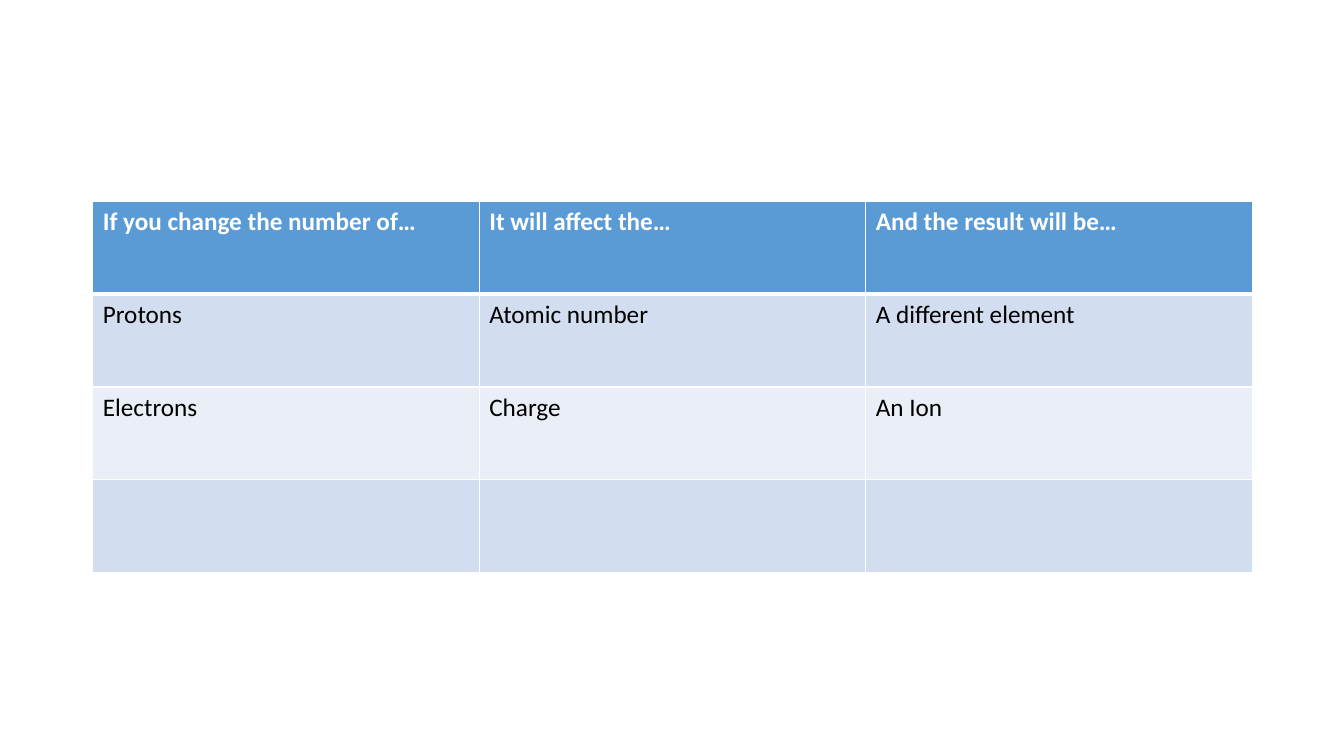
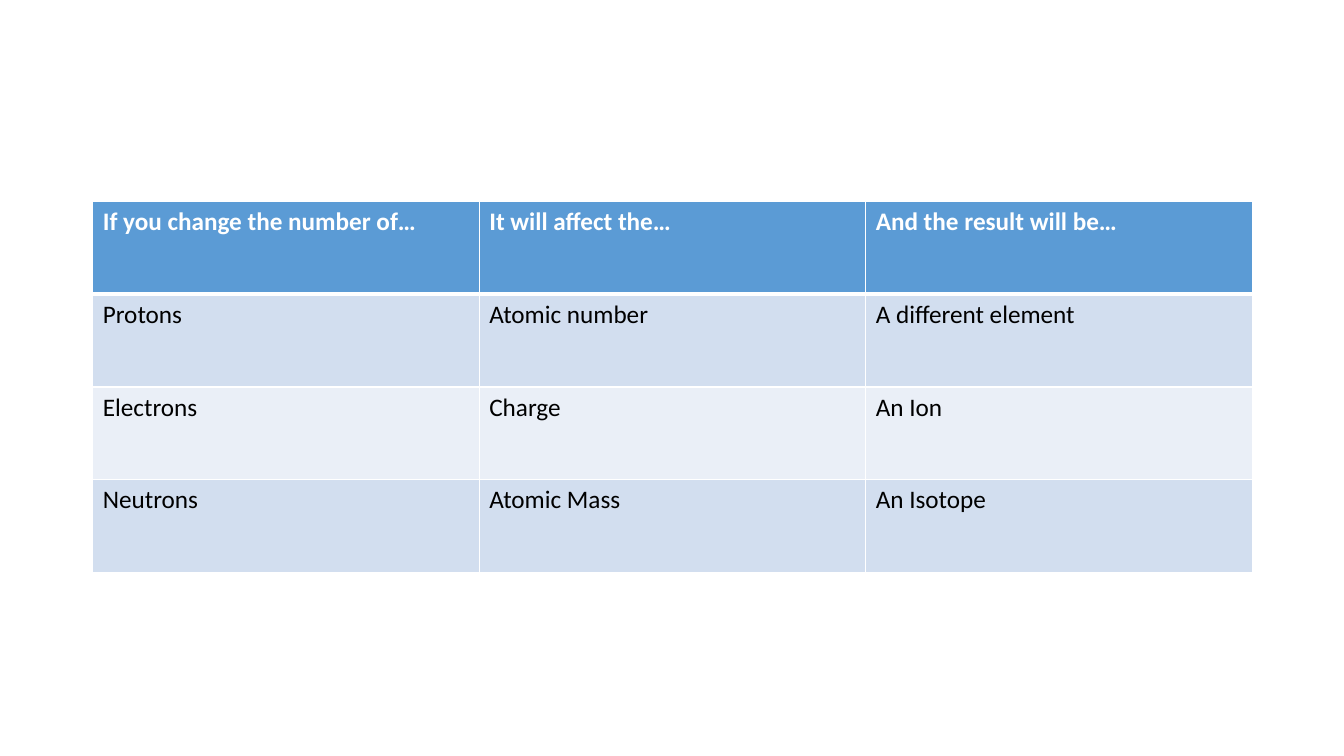
from dataclasses import dataclass

from lxml import etree
from pptx import Presentation
from pptx.dml.color import RGBColor
from pptx.oxml.ns import qn
from pptx.util import Inches, Pt


@dataclass(frozen=True)
class Theme:
    font: str = "Calibri"
    text_size: int = 18
    header_fill: str = "5B9BD5"
    band_fills: tuple = ("D2DEEF", "EAEFF7")
    header_text: str = "FFFFFF"
    body_text: str = "000000"
    border: str = "FFFFFF"
    thin_border: int = 1
    thick_border: int = 3


THEME = Theme()
BLANK_LAYOUT = 6
HEADER = ("If you change the number of…", "It will affect the…", "And the result will be…")
PROTONS = ("Protons", "Atomic number", "A different element")
ELECTRONS = ("Electrons", "Charge", "An Ion")
NEUTRONS = ("Neutrons", "Atomic Mass", "An Isotope")
UNANSWERED = ("", "", "")
SLIDE_ROWS = (
    (HEADER, PROTONS, ELECTRONS, UNANSWERED),
    (HEADER, PROTONS, ELECTRONS, NEUTRONS),
)
TABLE_LEFT, TABLE_TOP, TABLE_WIDTH = Inches(0.92), Inches(2), Inches(11.5)
ROW_HEIGHT = Inches(0.92)


def set_borders(cell, row_index):
    properties = cell._tc.get_or_add_tcPr()
    thick_side = {0: "lnB", 1: "lnT"}.get(row_index)
    for position, side in enumerate(("lnL", "lnR", "lnT", "lnB")):
        width = THEME.thick_border if side == thick_side else THEME.thin_border
        line = etree.Element(qn(f"a:{side}"), w=str(Pt(width)))
        fill = etree.SubElement(line, qn("a:solidFill"))
        etree.SubElement(fill, qn("a:srgbClr"), val=THEME.border)
        properties.insert(position, line)


def style_cell(cell, row_index, text):
    is_header = row_index == 0
    fill_color = THEME.header_fill if is_header else THEME.band_fills[(row_index - 1) % 2]
    text_color = THEME.header_text if is_header else THEME.body_text
    cell.fill.solid()
    cell.fill.fore_color.rgb = RGBColor.from_string(fill_color)
    set_borders(cell, row_index)
    cell.text_frame.text = text
    for paragraph in cell.text_frame.paragraphs:
        for run in paragraph.runs:
            run.font.name = THEME.font
            run.font.size = Pt(THEME.text_size)
            run.font.bold = is_header
            run.font.color.rgb = RGBColor.from_string(text_color)


presentation = Presentation()
presentation.slide_width = Inches(13.33)
presentation.slide_height = Inches(7.5)

for rows in SLIDE_ROWS:
    slide = presentation.slides.add_slide(presentation.slide_layouts[BLANK_LAYOUT])
    table = slide.shapes.add_table(
        len(rows), len(HEADER), TABLE_LEFT, TABLE_TOP, TABLE_WIDTH, ROW_HEIGHT * len(rows)
    ).table
    for row_index, texts in enumerate(rows):
        for column_index, text in enumerate(texts):
            style_cell(table.cell(row_index, column_index), row_index, text)

presentation.save("out.pptx")
